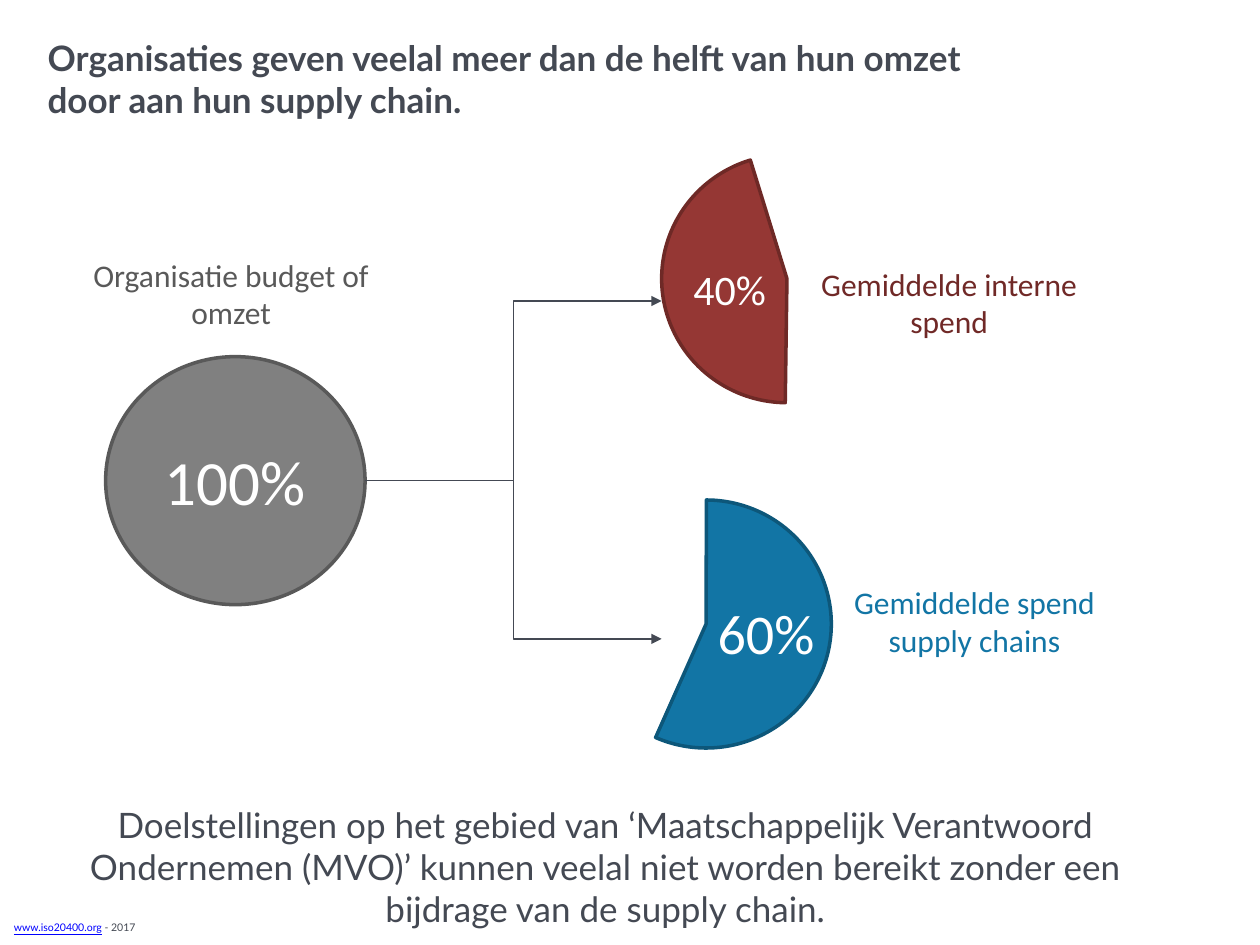
from dataclasses import dataclass, field
from lxml import etree
from pptx import Presentation
from pptx.dml.color import RGBColor
from pptx.enum import shapes, text
from pptx.oxml.ns import qn
from pptx.util import Cm, Pt

COLORS = {
    "ink": "444953", "link": "0000FF", "white": "FFFFFF",
    "gray": "808080", "gray_dark": "595959",
    "red": "953734", "red_dark": "6E2926", "red_text": "702927",
    "blue": "1275A5", "blue_dark": "0D577A",
}


def color(name):
    return RGBColor.from_string(COLORS[name])


def write(paragraph, content, size=18, font="Calibri", tint="ink", bold=False, underline=False):
    run = paragraph.add_run()
    run.text = content
    run.font.size = Pt(size)
    run.font.name = font
    run.font.bold = bold
    run.font.underline = underline
    run.font.color.rgb = color(tint)


@dataclass
class Canvas:
    slide: object
    heading: dict = field(default_factory=lambda: {"size": 20, "font": "Lato"})
    outline: float = 2
    thin: float = 0.75

    def label(self, box, lines, wrap=True, grow=True, align=text.PP_ALIGN.CENTER,
              anchor=text.MSO_ANCHOR.TOP, **style):
        shape = self.slide.shapes.add_textbox(*map(Cm, box))
        frame = shape.text_frame
        frame.word_wrap = wrap
        frame.vertical_anchor = anchor
        if grow:
            frame.auto_size = text.MSO_AUTO_SIZE.SHAPE_TO_FIT_TEXT
        for index, line in enumerate(lines):
            paragraph = frame.add_paragraph() if index else frame.paragraphs[0]
            paragraph.alignment = align
            write(paragraph, line, **style)
        return shape

    def filled(self, kind, box, fill, edge, angles=()):
        shape = self.slide.shapes.add_shape(kind, *map(Cm, box))
        shape.shadow.inherit = False
        shape.fill.solid()
        shape.fill.fore_color.rgb = color(fill)
        shape.line.color.rgb = color(edge)
        shape.line.width = Pt(self.outline)
        for index, degrees in enumerate(angles):
            shape.adjustments[index] = degrees * 60000 / 100000
        return shape

    def elbow_arrow(self, start, end):
        connector = self.slide.shapes.add_connector(
            shapes.MSO_CONNECTOR.ELBOW, *map(Cm, start + end))
        connector.line.color.rgb = color("ink")
        connector.line.width = Pt(self.thin)
        etree.SubElement(connector.line._get_or_add_ln(), qn("a:tailEnd"), type="triangle")
        etree.SubElement(connector._element.spPr, qn("a:effectLst"))


def main():
    presentation = Presentation()
    presentation.slide_width, presentation.slide_height = Cm(25.4), Cm(19.05)
    canvas = Canvas(presentation.slides.add_slide(presentation.slide_layouts[6]))
    left = text.PP_ALIGN.LEFT

    footer = canvas.label((0.03, 18.44, 16.43, 0.51), ["www.iso20400.org"], align=left,
                          size=6, font="Lato", tint="link", underline=True)
    write(footer.text_frame.paragraphs[0], " - 2017", size=6, font="Lato")
    canvas.label((0.71, 1.09, 19.99, 0.97),
                 ["Organisaties geven veelal meer dan de helft van hun omzet door aan hun supply chain."],
                 grow=False, align=left, anchor=text.MSO_ANCHOR.MIDDLE, bold=True, **canvas.heading)
    canvas.label((0.51, 16.08, 23.39, 2.82),
                 ["Doelstellingen op het gebied van ‘Maatschappelijk Verantwoord Ondernemen (MVO)’ "
                  "kunnen veelal niet worden bereikt zonder een bijdrage van de supply chain."],
                 **canvas.heading)

    budget = canvas.filled(shapes.MSO_SHAPE.OVAL, (2.13, 7.19, 5.23, 5), "gray", "gray_dark")
    budget.text_frame.vertical_anchor = text.MSO_ANCHOR.MIDDLE
    paragraph = budget.text_frame.paragraphs[0]
    paragraph.alignment = text.PP_ALIGN.CENTER
    write(paragraph, "100%", size=36, tint="white")
    canvas.label((1.37, 5.03, 6.58, 1.8), ["Organisatie budget of omzet"], tint="gray_dark")

    parts = [
        ((13.34, 3.12), (90.79, 252.87), "red", "red_dark",
         (15.44, 5.21, 7.39, 1.8), ["Gemiddelde interne", "spend"], "red_text",
         (13.72, 5.18, 1.98, 1.27), "40%", 24, 6.07),
        ((11.71, 10.08), (270.15, 113.98), "blue", "blue_dark",
         (16.76, 11.63, 5.77, 1.8), ["Gemiddelde spend supply chains"], "blue",
         (14.2, 11.94, 2.49, 1.63), "60%", 32, 12.88),
    ]
    for corner, angles, fill, edge, box, lines, tint, share_box, share, size, arrow_y in parts:
        canvas.filled(shapes.MSO_SHAPE.PIE, corner + (5.05, 5), fill, edge, angles)
        canvas.label(box, lines, tint=tint)
        canvas.label(share_box, [share], wrap=False, size=size, tint="white")
        canvas.elbow_arrow((7.36, 9.69), (13.34, arrow_y))

    presentation.save("out.pptx")


if __name__ == "__main__":
    main()
